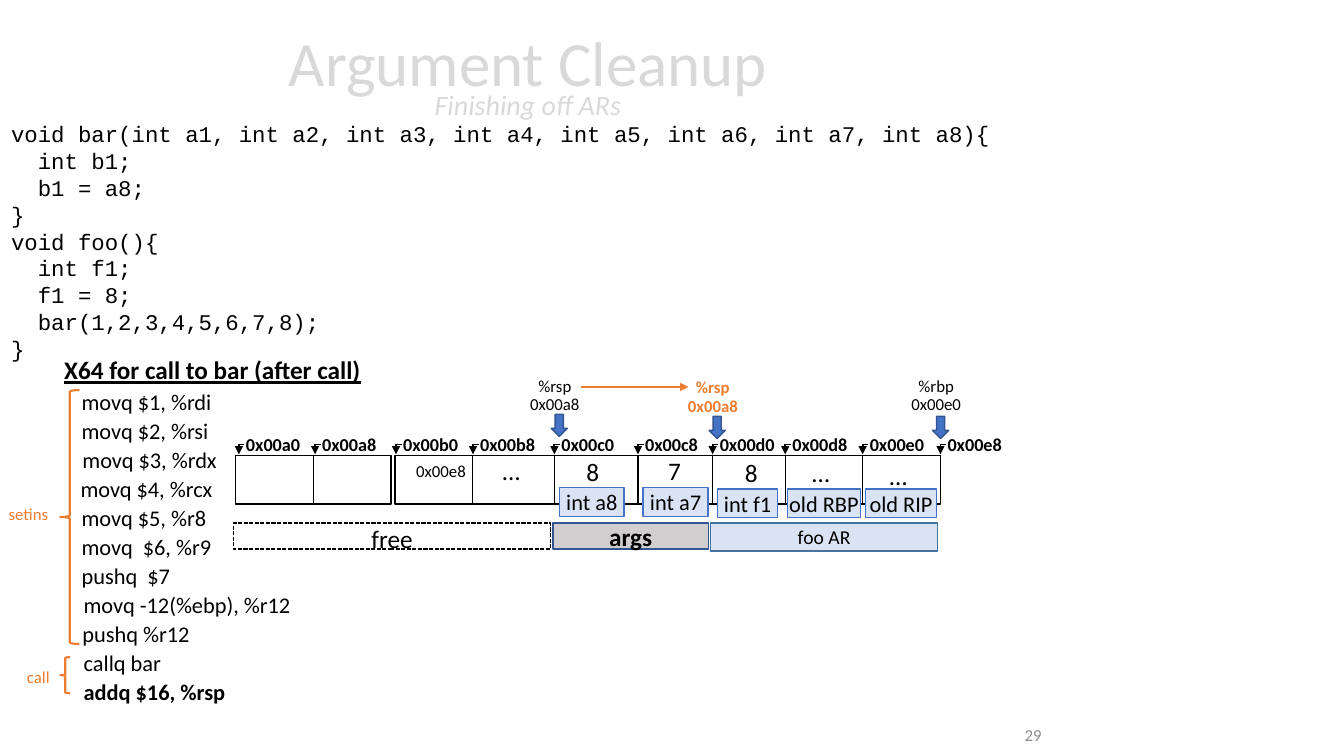
import pptx
import pptx.util
import pptx.dml.color
import pptx.enum.dml
import pptx.enum.shapes
import pptx.enum.text
import lxml.etree

Cm = pptx.util.Cm
Pt = pptx.util.Pt
SHAPES = pptx.enum.shapes.MSO_SHAPE
ALIGN = pptx.enum.text.PP_ALIGN
ANCHOR = pptx.enum.text.MSO_ANCHOR

BLACK, WHITE, ORANGE = "000000", "FFFFFF", "ED7D31"
BLUE, DARK_BLUE, PALE_BLUE = "4472C4", "325491", "DAE3F3"
DEFAULT_INSET, NO_INSET = (0.25, 0.13), (0, 0)

TITLE = [("Argument Cleanup", 45, False), ("Finishing off ARs", 20, True)]
CODE = """void bar(int a1, int a2, int a3, int a4, int a5, int a6, int a7, int a8){
  int b1;
  b1 = a8;
}
void foo(){
  int f1;
  f1 = 8;
  bar(1,2,3,4,5,6,7,8);
}"""
INSTRUCTIONS = [
    ("movq $1, %rdi", 2.06, 3.33), ("movq $2, %rsi", 2.06, 3.23),
    ("movq $3, %rdx", 2.08, 3.43), ("movq $4, %rcx", 2.03, 3.38),
    ("movq $5, %r8", 2.06, 3.18), ("movq  $6, %r9", 2.06, 3.3),
    ("pushq  $7", 2.06, 2.26), ("movq -12(%ebp), %r12", 2.11, 5.28),
    ("pushq %r12", 2.08, 2.74), ("callq bar", 2.11, 1.96),
    ("addq $16, %rsp", 2.11, 3.63),
]
CELLS = [(5.94, 1.96), (7.9, 1.96), (9.96, 1.96), (11.91, 2.06), (13.97, 2.11),
         (16.08, 1.88), (17.96, 1.83), (19.79, 1.96), (21.74, 1.96)]
ADDRESSES = [("0x00a0", 6.02), ("0x00a8", 7.94), ("0x00b0", 9.98), ("0x00b8", 11.92),
             ("0x00c0", 13.97), ("0x00c8", 16.08), ("0x00d0", 17.96),
             ("0x00d8", 19.79), ("0x00e0", 21.74), ("0x00e8", 23.7)]
VALUES = [("…", 12.42, 11.35, 0.97), ("8", 14.53, 11.38, 0.84), ("7", 16.59, 11.35, 0.84),
          ("8", 18.52, 11.4, 0.84), ("…", 20.22, 11.4, 0.97), ("…", 22.17, 11.46, 0.97)]
VARIABLES = [("int a8", 14.1, 12.29, 1.63), ("int a7", 16.21, 12.29, 1.63),
             ("int f1", 18.08, 12.32, 1.52), ("old RBP", 19.84, 12.32, 1.85),
             ("old RIP", 21.82, 12.32, 1.78)]
REGISTERS = [("%rsp", "0x00a8", 13.99, 9.47, 10.44, BLACK, False),
             ("%rsp", "0x00a8", 17.97, 9.5, 10.49, ORANGE, True),
             ("%rbp", "0x00e0", 23.6, 9.47, 10.49, BLACK, False)]
BRACES = [("setins", (-0.03, 12.57, 1.52, 0.76), (1.52, 9.83, 0.48, 6.4)),
          ("call", (0.43, 16.66, 1.09, 0.76), (1.52, 16.56, 0.25, 0.91))]

FIRST_INSTRUCTION_TOP, INSTRUCTION_STEP = 9.78, 0.73
CELL_TOP, CELL_HEIGHT = 11.48, 1.22
TICK_TOP, TICK_BOTTOM = 11.2, 11.45


def color(value):
    return pptx.dml.color.RGBColor.from_string(value)


def lengths(values):
    return [Cm(value) for value in values]


def write(shape, text, size, ink=BLACK, bold=None, underline=None, font="Calibri",
          align=ALIGN.LEFT, anchor=ANCHOR.TOP, inset=DEFAULT_INSET, wrap=False):
    frame = shape.text_frame
    frame.word_wrap = wrap
    frame.vertical_anchor = anchor
    frame.margin_left = frame.margin_right = Cm(inset[0])
    frame.margin_top = frame.margin_bottom = Cm(inset[1])
    frame.text = text
    for paragraph in frame.paragraphs:
        paragraph.alignment = align
        paragraph.font.name = font
        paragraph.font.size = Pt(size)
        paragraph.font.bold = bold
        paragraph.font.underline = underline
        paragraph.font.color.rgb = color(ink)


def add_text(slide, text, box, size, **style):
    write(slide.shapes.add_textbox(*lengths(box)), text, size, **style)


def add_block(slide, kind, box, fill, line, width=1):
    shape = slide.shapes.add_shape(kind, *lengths(box))
    shape.shadow.inherit = False
    if fill:
        shape.fill.solid()
        shape.fill.fore_color.rgb = color(fill)
    else:
        shape.fill.background()
    shape.line.color.rgb = color(line)
    shape.line.width = Pt(width)
    return shape


def add_line(slide, ends, ink, width, arrow=False):
    connector = slide.shapes.add_connector(
        pptx.enum.shapes.MSO_CONNECTOR.STRAIGHT, *lengths(ends))
    connector.line.color.rgb = color(ink)
    connector.line.width = Pt(width)
    namespace = pptx.oxml.ns.qn
    if arrow:
        lxml.etree.SubElement(connector.line._get_or_add_ln(), namespace("a:tailEnd"),
                              type="triangle")
    lxml.etree.SubElement(connector._element.spPr, namespace("a:effectLst"))


def add_title(slide):
    title = slide.shapes.title
    title.left, title.top, title.width, title.height = lengths((2.36, 0.23, 21.89, 3.68))
    frame = title.text_frame
    frame.auto_size = pptx.enum.text.MSO_AUTO_SIZE.NONE
    frame.vertical_anchor = ANCHOR.MIDDLE
    paragraph = frame.paragraphs[0]
    paragraph.alignment = ALIGN.CENTER
    paragraph.line_spacing = 0.7
    paragraph.font.name = "Calibri"
    paragraph.font.color.rgb = color("D9D9D9")
    for index, (text, size, italic) in enumerate(TITLE):
        if index:
            paragraph.add_line_break()
        run = paragraph.add_run()
        run.text = text
        run.font.size = Pt(size)
        run.font.italic = italic


def add_code(slide):
    add_text(slide, CODE, (0.03, 2.9, 25.55, 6.4), 16, font="Courier New")
    add_text(slide, "X64 for call to bar (after call)", (1.37, 8.81, 8.08, 1.02), 18,
             bold=True, underline=True)
    for row, (text, left, width) in enumerate(INSTRUCTIONS):
        top = FIRST_INSTRUCTION_TOP + row * INSTRUCTION_STEP
        add_text(slide, text, (left, top, width, 0.69), 16, inset=NO_INSET,
                 bold=row == len(INSTRUCTIONS) - 1)
    for text, label_box, brace_box in BRACES:
        add_block(slide, SHAPES.LEFT_BRACE, brace_box, None, ORANGE, 1.5)
        add_text(slide, text, label_box, 12, ink=ORANGE)


def add_stack(slide):
    for left, width in CELLS:
        add_block(slide, SHAPES.RECTANGLE, (left, CELL_TOP, width, CELL_HEIGHT), WHITE, BLACK)
    for text, left in ADDRESSES:
        add_text(slide, text, (left + 0.18, 10.92, 1.47, 0.56), 13, bold=True, inset=NO_INSET)
        add_line(slide, (left, TICK_TOP, left, TICK_BOTTOM), BLACK, 1.25, arrow=True)
        add_line(slide, (left - 0.02, TICK_TOP, left + 0.14, TICK_TOP), BLACK, 1.25)
    for text, left, top, width in VALUES:
        add_text(slide, text, (left, top, width, 1.02), 18)
    add_text(slide, "0x00e8", (10.49, 11.61, 1.27, 0.51), 12, inset=NO_INSET)
    for text, left, top, width in VARIABLES:
        block = add_block(slide, SHAPES.RECTANGLE, (left, top, width, 0.72), PALE_BLUE, BLUE)
        write(block, text, 16, align=ALIGN.CENTER, anchor=ANCHOR.MIDDLE, inset=(0, 0.13))


def add_regions(slide):
    free = add_block(slide, SHAPES.RECTANGLE, (5.89, 13.18, 7.98, 0.66), None, BLACK)
    free.line.dash_style = pptx.enum.dml.MSO_LINE.SQUARE_DOT
    write(free, "free", 18, align=ALIGN.CENTER, inset=(0.03, 0), wrap=True)
    arguments = add_block(slide, SHAPES.RECTANGLE, (13.94, 13.18, 3.91, 0.66),
                          "D0CECE", DARK_BLUE)
    write(arguments, "args", 18, bold=True, align=ALIGN.CENTER, anchor=ANCHOR.MIDDLE)
    record = add_block(slide, SHAPES.RECTANGLE, (17.91, 13.18, 5.72, 0.71),
                       PALE_BLUE, "43739E")
    write(record, "foo AR", 14, align=ALIGN.CENTER, anchor=ANCHOR.MIDDLE)


def add_registers(slide):
    for name, address, center, top, arrow_top, ink, bold in REGISTERS:
        for text, offset in ((name, 0), (address, 0.46)):
            add_text(slide, text, (center - 0.64, top + offset, 1.27, 0.51), 12, ink=ink,
                     bold=bold, align=ALIGN.CENTER, inset=NO_INSET)
        add_block(slide, SHAPES.DOWN_ARROW, (center + 0.06 - 0.16, arrow_top, 0.41, 0.56),
                  BLUE, DARK_BLUE)
    add_line(slide, (14.63, 9.75, 17.35, 9.75), ORANGE, 1.5, arrow=True)


def main():
    presentation = pptx.Presentation()
    presentation.slide_width, presentation.slide_height = lengths((33.87, 19.05))
    slide = presentation.slides.add_slide(presentation.slide_layouts[5])
    add_title(slide)
    add_code(slide)
    add_stack(slide)
    add_regions(slide)
    add_registers(slide)
    add_text(slide, "29", (20.78, 18.01, 5.72, 1.02), 12, ink="8C8C8C", align=ALIGN.RIGHT,
             anchor=ANCHOR.MIDDLE, wrap=True)
    presentation.save("out.pptx")


if __name__ == "__main__":
    main()
